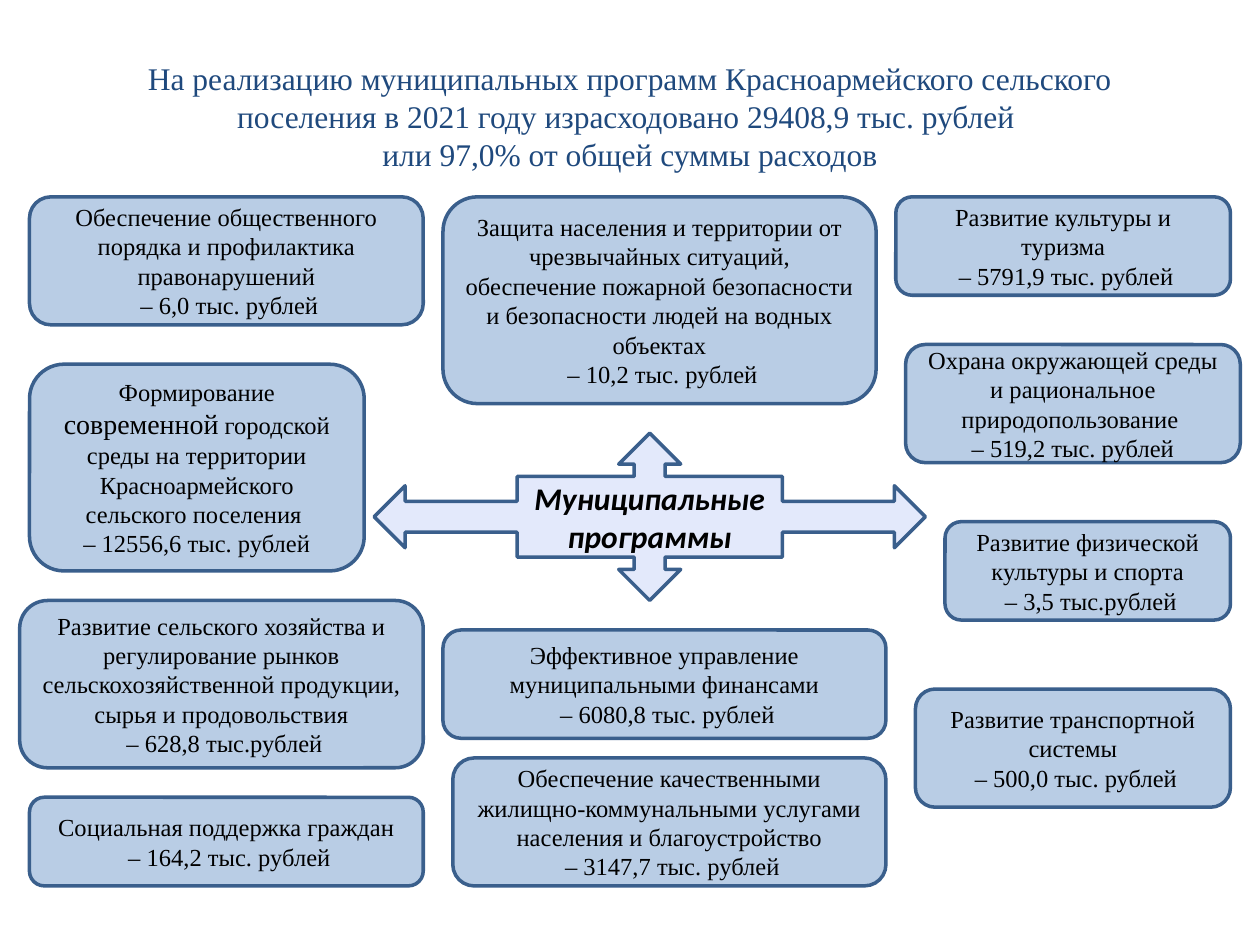
"""Build a slide of municipal programmes and their spending around a central callout."""
from dataclasses import dataclass

from pptx import Presentation
from pptx import util as u
from pptx.dml.color import RGBColor
from pptx.enum import shapes, text

WIDE, HIGH = 1280, 960
SCALE = u.Inches(10) / WIDE

HEAD = (
    "На реализацию муниципальных программ Красноармейского сельского "
    "поселения в 2021 году израсходовано 29408,9 тыс. рублей \v"
    "или 97,0% от общей суммы расходов"
)
HUB = "Муниципальные программы"
BIG = "современной"
HEAD_AT = (64, 38, 1152, 160)
HUB_AT = (380, 440, 560, 170)

CARDS = [
    ((30, 200, 400, 130),
     "Обеспечение общественного порядка и профилактика правонарушений",
     " – 6,0 тыс. рублей"),
    ((460, 770, 440, 130),
     "Обеспечение качественными жилищно-коммунальными услугами населения и благоустройство",
     " – 3147,7 тыс. рублей"),
    ((30, 370, 340, 210),
     "Формирование современной городской среды на территории Красноармейского сельского поселения ",
     "– 12556,6 тыс. рублей"),
    ((930, 700, 320, 120),
     "Развитие транспортной системы",
     " – 500,0 тыс. рублей"),
    ((20, 610, 410, 170),
     "Развитие сельского хозяйства и регулирование рынков сельскохозяйственной продукции, "
     "сырья и продовольствия",
     " – 628,8 тыс.рублей"),
    ((30, 810, 400, 90),
     "Социальная поддержка граждан",
     " – 164,2 тыс. рублей"),
    ((450, 640, 450, 110),
     "Эффективное управление муниципальными финансами",
     " – 6080,8 тыс. рублей"),
    ((960, 530, 290, 100),
     "Развитие физической культуры и спорта",
     " – 3,5 тыс.рублей"),
    ((920, 350, 340, 120),
     "Охрана окружающей среды и рациональное природопользование ",
     "– 519,2 тыс. рублей"),
    ((450, 200, 440, 210),
     "Защита населения и территории от чрезвычайных ситуаций, обеспечение пожарной "
     "безопасности и безопасности людей на водных объектах",
     " – 10,2 тыс. рублей"),
    ((910, 200, 340, 100),
     "Развитие культуры и туризма",
     " – 5791,9 тыс. рублей"),
]


@dataclass(frozen=True)
class Theme:
    head: str = "1F497D"
    ink: str = "000000"
    card: str = "B9CDE5"
    hub: str = "E3E9FB"
    edge: str = "3A5F8C"
    serif: str = "Times New Roman"
    sans: str = "Calibri"
    large: int = 18
    mid: int = 16
    small: int = 14
    line: int = 2


THEME = Theme()


def place(box):
    return [round(n * SCALE) for n in box]


def write(shape, lines, font, size, color, strong=False):
    frame = shape.text_frame
    frame.word_wrap = True
    frame.vertical_anchor = text.MSO_ANCHOR.MIDDLE
    frame.text = "\n".join(lines)
    for para, line in zip(frame.paragraphs, lines):
        para.alignment = text.PP_ALIGN.CENTER
        start, mark, rest = line.partition(BIG)
        if mark:
            para.text = start
            for part in (mark, rest):
                para.add_run().text = part
        for run in para.runs:
            run.font.name = font
            run.font.size = u.Pt(THEME.mid if run.text == BIG else size)
            run.font.color.rgb = RGBColor.from_string(color)
            run.font.bold = run.font.italic = strong


def draw(slide, kind, box, fill):
    shape = slide.shapes.add_shape(kind, *place(box))
    shape.shadow.inherit = False
    shape.fill.solid()
    shape.fill.fore_color.rgb = RGBColor.from_string(fill)
    shape.line.color.rgb = RGBColor.from_string(THEME.edge)
    shape.line.width = u.Pt(THEME.line)
    return shape


def main():
    deck = Presentation()
    deck.slide_width, deck.slide_height = place((WIDE, HIGH))
    slide = deck.slides.add_slide(deck.slide_layouts[6])
    kinds = shapes.MSO_SHAPE

    head = slide.shapes.add_textbox(*place(HEAD_AT))
    write(head, [HEAD], THEME.serif, THEME.large, THEME.head)

    hub = draw(slide, kinds.QUAD_ARROW_CALLOUT, HUB_AT, THEME.hub)
    write(hub, [HUB], THEME.sans, THEME.large, THEME.ink, True)

    for box, *lines in CARDS:
        card = draw(slide, kinds.ROUNDED_RECTANGLE, box, THEME.card)
        write(card, lines, THEME.serif, THEME.small, THEME.ink)

    deck.save("out.pptx")


if __name__ == "__main__":
    main()
